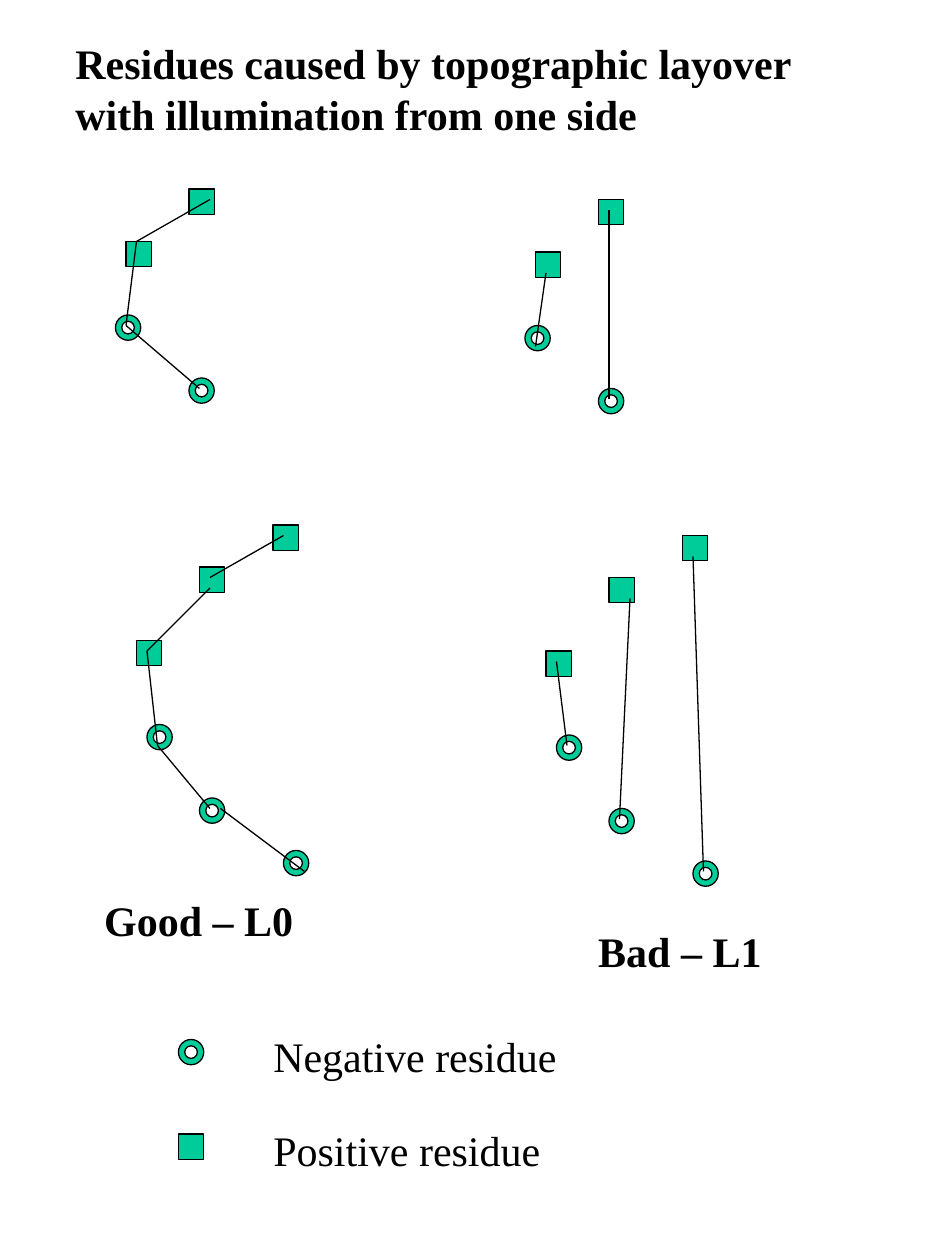
import pptx
import pptx.dml.color
import pptx.enum.shapes
import pptx.enum.text
import pptx.oxml
import pptx.util
from pptx.util import Cm

SHAPE = pptx.enum.shapes.MSO_SHAPE
POSITIVE, NEGATIVE = SHAPE.RECTANGLE, SHAPE.DONUT
GREEN, BLACK = "00CC99", "000000"
FONT = "Times New Roman"
MARKER_SIZE = Cm(0.51)

# Positions below are in grid steps of a twelfth of an inch.
POSITIVE_SPOTS = [(18, 18), (12, 23), (26, 50), (19, 54), (13, 61)]
NEGATIVE_SPOTS = [(11, 30), (18, 36), (14, 69), (19, 76), (27, 81)]
GOOD_OFFSET, BAD_OFFSET = (0, 0), (39, 1)
GOOD_CHAINS = [
    [(20, 19), (13, 23), (12, 31), (19, 37)],
    [(27, 51), (20, 55)],
    [(20, 56), (14, 62), (15, 71), (20, 77)],
    [(21, 77), (29, 83)],
]
BAD_CHAINS = [
    [(52, 26), (51, 33)],
    [(58, 20), (58, 38)],
    [(53, 63), (54, 71)],
    [(60, 57), (59, 78)],
    [(66, 53), (67, 83)],
]


def grid(steps):
    return Cm(steps * 2.54 / 12)


def color(hex_string):
    return pptx.dml.color.RGBColor.from_string(hex_string)


def style_line(line):
    line.color.rgb = color(BLACK)
    line.width = pptx.util.Pt(0.75)


def add_residue(shapes, sign, x, y):
    residue = shapes.add_shape(sign, grid(x), grid(y), MARKER_SIZE, MARKER_SIZE)
    residue.shadow.inherit = False
    residue.fill.solid()
    residue.fill.fore_color.rgb = color(GREEN)
    style_line(residue.line)


def add_residue_group(slide, offset):
    group = slide.shapes.add_group_shape()
    for sign, spots in ((POSITIVE, POSITIVE_SPOTS), (NEGATIVE, NEGATIVE_SPOTS)):
        for x, y in spots:
            add_residue(group.shapes, sign, x + offset[0], y + offset[1])


def add_chain(slide, points):
    """Join successive points with straight branch cuts."""
    for start, end in zip(points, points[1:]):
        cut = slide.shapes.add_connector(
            pptx.enum.shapes.MSO_CONNECTOR.STRAIGHT,
            *(grid(steps) for steps in start + end))
        style_line(cut.line)
        effects = pptx.oxml.ns.qn("a:effectLst")
        cut._element.spPr.append(cut._element.makeelement(effects, {}))


def add_text(slide, text, left, top, width, height=1.27, bold=False, wrap=False):
    box = slide.shapes.add_textbox(Cm(left), Cm(top), Cm(width), Cm(height))
    frame = box.text_frame
    frame.word_wrap = wrap
    frame.auto_size = pptx.enum.text.MSO_AUTO_SIZE.SHAPE_TO_FIT_TEXT
    run = frame.paragraphs[0].add_run()
    run.text = text
    run.font.name = FONT
    run.font.size = pptx.util.Pt(24)
    run.font.bold = bold
    run.font.color.rgb = color(BLACK)


def add_legend_entry(slide, sign, y, text, text_top, text_width):
    add_residue(slide.shapes, sign, 17, y)
    add_text(slide, text, 5.26, text_top, text_width)


def main():
    presentation = pptx.Presentation()
    presentation.slide_width = Cm(19.05)
    presentation.slide_height = Cm(25.4)
    slide = presentation.slides.add_slide(presentation.slide_layouts[6])

    add_residue_group(slide, GOOD_OFFSET)
    add_residue_group(slide, BAD_OFFSET)
    add_legend_entry(slide, NEGATIVE, 99, "Negative residue", 20.65, 6.22)
    add_legend_entry(slide, POSITIVE, 108, "Positive residue", 22.55, 5.89)
    for chain in GOOD_CHAINS + BAD_CHAINS:
        add_chain(slide, chain)

    add_text(slide, "Residues caused by topographic layover with illumination from one side",
             1.27, 0.64, 16.56, 2.29, bold=True, wrap=True)
    add_text(slide, "Good – L0", 1.85, 17.91, 4.32, bold=True)
    add_text(slide, "Bad – L1", 11.81, 18.54, 3.81, bold=True)

    presentation.save("out.pptx")


if __name__ == "__main__":
    main()
